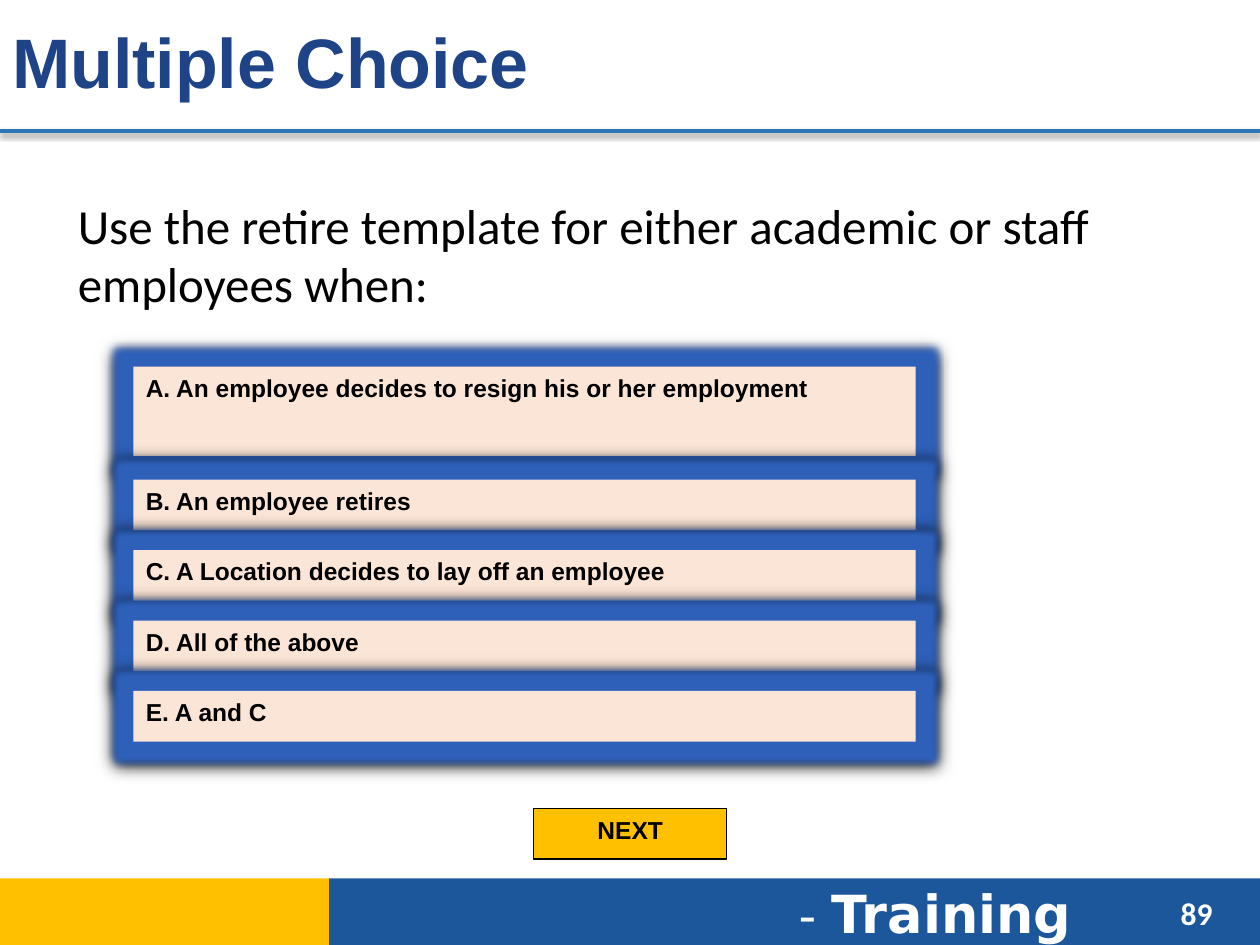
from lxml.etree import SubElement
from pptx import Presentation
from pptx.dml.color import RGBColor
from pptx.enum.shapes import MSO_CONNECTOR as Connector, MSO_SHAPE as Shape
from pptx.enum.text import MSO_ANCHOR as Anchor, PP_ALIGN as Align
from pptx.oxml.ns import qn
from pptx.util import Cm, Pt

COLORS = {
    "title": "1E4386",
    "rule": "2E75B5",
    "bar": "1D579B",
    "gold": "FFC000",
    "answer": "FBE5D6",
    "glow": "2E60BA",
    "white": "FFFFFF",
    "black": "000000",
}
ANSWERS = [
    "A. An employee decides to resign his or her employment",
    "B. An employee retires",
    "C. A Location decides to lay off an employee",
    "D. All of the above",
    "E. A and C",
]


def color(name):
    return RGBColor.from_string(COLORS[name])


def style(font, name, size, color_name, bold=False):
    font.name = name
    font.size = Pt(size)
    font.bold = bold
    font.color.rgb = color(color_name)


def add_effect(effects, tag, color_name, opacity, **attributes):
    effect = SubElement(effects, qn(tag), {key: str(value) for key, value in attributes.items()})
    fill = SubElement(effect, qn("a:srgbClr"), val=COLORS[color_name])
    SubElement(fill, qn("a:alpha"), val=str(opacity * 1000))


def add_shadow(effects, opacity, blur, distance):
    add_effect(effects, "a:outerShdw", "black", opacity, blurRad=Pt(blur),
               dist=Pt(distance), dir=90 * 60000, algn="ctr", rotWithShape=0)


def add_rectangle(slide, left, top, width, height, fill):
    shape = slide.shapes.add_shape(Shape.RECTANGLE, Cm(left), Cm(top), Cm(width), Cm(height))
    shape.fill.solid()
    shape.fill.fore_color.rgb = color(fill)
    shape.line.fill.background()
    shape.shadow.inherit = False
    return shape


def add_text(slide, left, top, width, height, text=""):
    box = slide.shapes.add_textbox(Cm(left), Cm(top), Cm(width), Cm(height))
    box.text_frame.word_wrap = True
    paragraph = box.text_frame.paragraphs[0]
    paragraph.text = text
    return box, paragraph


def add_label(shape, text, alignment):
    frame = shape.text_frame
    frame.word_wrap = True
    frame.vertical_anchor = Anchor.TOP
    paragraph = frame.paragraphs[0]
    paragraph.text = text
    paragraph.alignment = alignment
    style(paragraph.font, "Arial", 14, "black", True)


def add_header(slide, left, top, width, height):
    box, paragraph = add_text(slide, left, top + 0.05, width - 2.54, height - 0.28, "Multiple Choice")
    box.text_frame.vertical_anchor = Anchor.MIDDLE
    style(paragraph.font, "Arial", 40, "title", True)
    bottom = Cm(top + height)
    rule = slide.shapes.add_connector(Connector.STRAIGHT, Cm(left), bottom, Cm(left + width), bottom)
    rule.line.color.rgb = color("rule")
    rule.line.width = Pt(2.25)
    effects = SubElement(rule._element.spPr, qn("a:effectLst"))
    add_shadow(effects, 38, 3.1, 1.6)


def add_question(slide, left, top, width, height):
    text = "Use the retire template for either academic or staff employees when:"
    _, paragraph = add_text(slide, left, top, width, height, text)
    paragraph.space_before = Pt(6.4)
    style(paragraph.font, "Calibri", 28, "black")


def add_answers(slide, left, top, width):
    first_height, height, first_pitch, pitch = 1.8, 1.02, 2.28, 1.42
    for index, answer in enumerate(ANSWERS):
        offset = first_pitch + (index - 1) * pitch if index else 0
        shape = add_rectangle(slide, left, top + offset, width,
                              height if index else first_height, "answer")
        effects = shape._element.spPr.find(qn("a:effectLst"))
        add_effect(effects, "a:glow", "glow", 100, rad=Pt(8))
        add_shadow(effects, 100, 8.5, 1)
        add_label(shape, answer, Align.LEFT)


def add_next_button(slide, left, top, width, height):
    button = add_rectangle(slide, left, top, width, height, "gold")
    button.line.color.rgb = color("black")
    button.line.width = Pt(0.75)
    add_label(button, "NEXT", Align.CENTER)


def add_footer(slide, left, top, width, height):
    gold_width = 6.63
    add_rectangle(slide, left + gold_width, top, width - gold_width, height, "bar")
    add_rectangle(slide, left, top, gold_width, height, "gold")
    box, paragraph = add_text(slide, left + 15.85, top - 0.08, 7.11, 1.55)
    box.text_frame.word_wrap = False
    for text, size, bold in [("- ", 28, False), ("Training", 30, True)]:
        run = paragraph.add_run()
        run.text = text
        style(run.font, "DejaVu Sans", size, "white", bold)
    _, paragraph = add_text(slide, left + 23.55, top + 0.18, 1.52, 1.02, "89")
    style(paragraph.font, "Calibri", 18, "white", True)


def main():
    presentation = Presentation()
    presentation.slide_width = Cm(25.4)
    presentation.slide_height = Cm(19.05)
    slide = presentation.slides.add_slide(presentation.slide_layouts[6])
    add_footer(slide, 0, 17.71, 25.4, 1.34)
    add_header(slide, 0, 0, 25.4, 2.64)
    add_question(slide, 1.32, 3.81, 23.57, 13.34)
    add_answers(slide, 2.69, 7.39, 15.77)
    add_next_button(slide, 10.76, 16.3, 3.89, 1.02)
    presentation.save("out.pptx")


if __name__ == "__main__":
    main()
